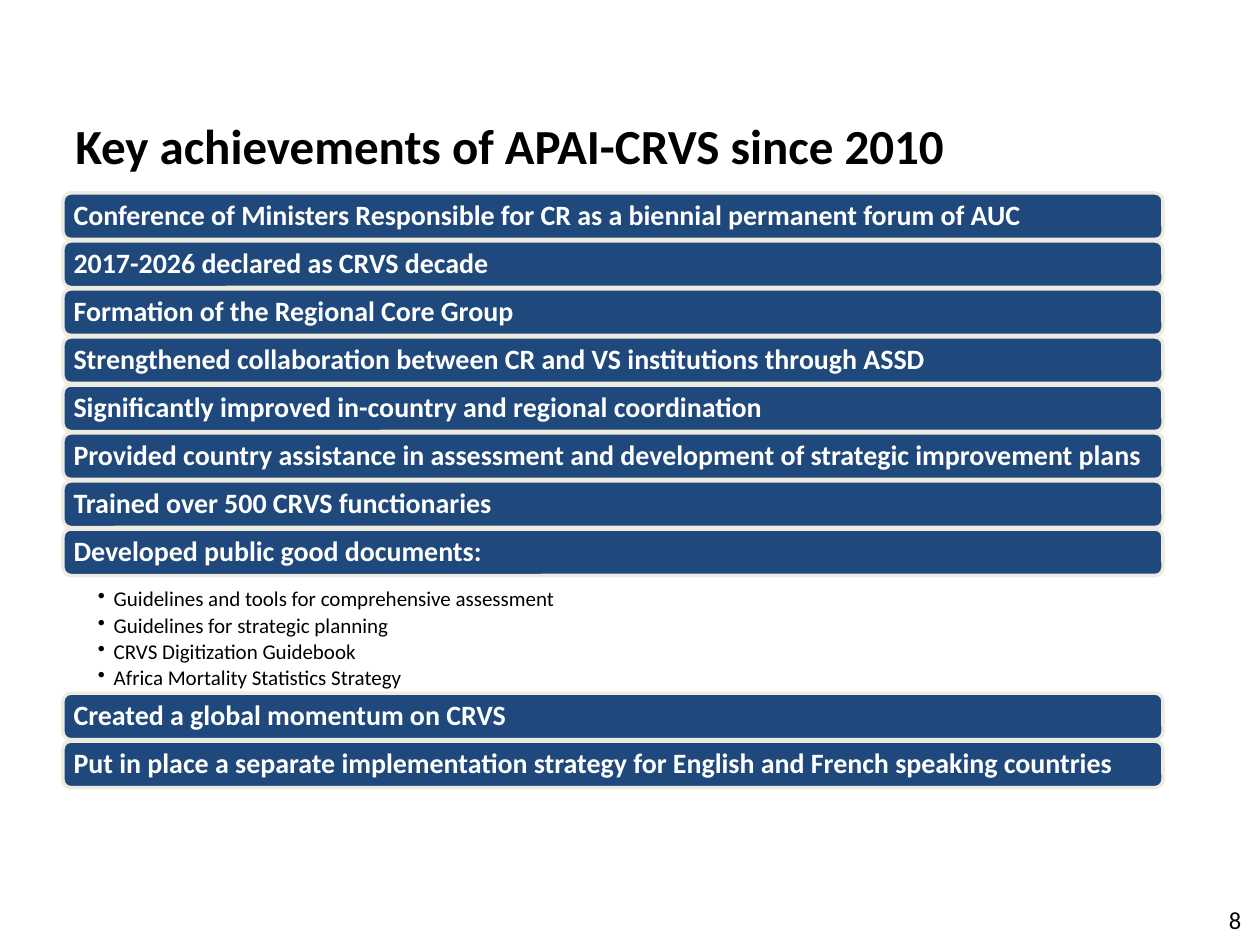
from dataclasses import dataclass

from lxml.etree import SubElement
from pptx import Presentation
from pptx.dml.color import RGBColor
from pptx.enum.shapes import MSO_SHAPE as Preset
from pptx.enum.text import MSO_ANCHOR as Anchor, PP_ALIGN as Align
from pptx.oxml.ns import qn
from pptx.util import Pt


@dataclass(frozen=True)
class Theme:
    font: str = "Calibri"
    ink: RGBColor = RGBColor(0x00, 0x00, 0x00)
    bar: RGBColor = RGBColor(0x1F, 0x49, 0x7D)
    edge: RGBColor = RGBColor(0xEE, 0xEC, 0xE1)
    bar_text: RGBColor = RGBColor(0xFF, 0xFF, 0xFF)
    title_size: int = 28
    bar_size: int = 16
    bullet_size: int = 12
    number_size: int = 14


theme = Theme()


def set_frame(shape, anchor, left, top, right, bottom):
    frame = shape.text_frame
    frame.word_wrap = True
    frame.vertical_anchor = anchor
    frame.margin_left, frame.margin_top = Pt(left), Pt(top)
    frame.margin_right, frame.margin_bottom = Pt(right), Pt(bottom)
    return frame


def add_run(paragraph, text, size, color, bold=False):
    run = paragraph.add_run()
    run.text = text
    run.font.name = theme.font
    run.font.size = Pt(size)
    run.font.bold = bold
    run.font.color.rgb = color


deck = Presentation()
deck.slide_width, deck.slide_height = Pt(720), Pt(540)
slide = deck.slides.add_slide(deck.slide_layouts[6])
shapes = slide.shapes

left, width = 36, 628.6
bar_height, bar_pitch = 26.6, 27.43

# Title
title = shapes.add_textbox(Pt(left), Pt(62.6), Pt(width), Pt(41))
title_frame = set_frame(title, Anchor.MIDDLE, 7.2, 3.6, 7.2, 3.6)
add_run(title_frame.paragraphs[0], "Key achievements of APAI-CRVS since 2010",
        theme.title_size, theme.ink, bold=True)

# Achievement bars, in two stacks around the document list
stacks = [
    (110.3, [
        "Conference of Ministers Responsible for CR as a biennial permanent forum of AUC",
        "2017-2026 declared as CRVS decade",
        "Formation of the Regional Core Group",
        "Strengthened collaboration between CR and VS institutions through ASSD",
        "Significantly improved in-country and regional coordination",
        "Provided country assistance in assessment and development of strategic improvement plans",
        "Trained over 500 CRVS functionaries",
        "Developed public good documents:",
    ]),
    (396.1, [
        "Created a global momentum on CRVS",
        "Put in place a separate implementation strategy for English and French speaking countries",
    ]),
]
for stack_top, achievements in stacks:
    for row, achievement in enumerate(achievements):
        bar = shapes.add_shape(Preset.ROUNDED_RECTANGLE, Pt(left),
                               Pt(stack_top + row * bar_pitch),
                               Pt(width), Pt(bar_height))
        bar.shadow.inherit = False
        bar.fill.solid()
        bar.fill.fore_color.rgb = theme.bar
        bar.line.color.rgb = theme.edge
        bar.line.width = Pt(2)
        paragraph = set_frame(bar, Anchor.MIDDLE, 4.8, 4.8, 4.8, 4.8).paragraphs[0]
        paragraph.alignment = Align.LEFT
        paragraph.line_spacing = 0.9
        add_run(paragraph, achievement, theme.bar_size, theme.bar_text, bold=True)

# Public good documents
documents = [
    "Guidelines and tools for comprehensive assessment",
    "Guidelines for strategic planning",
    "CRVS Digitization Guidebook",
    "Africa Mortality Statistics Strategy",
]
document_list = shapes.add_textbox(Pt(left), Pt(329.2), Pt(width), Pt(66.9))
document_frame = set_frame(document_list, Anchor.TOP, 20, 7.2, 6.5, 7.2)
for index, document in enumerate(documents):
    paragraph = document_frame.add_paragraph() if index else document_frame.paragraphs[0]
    paragraph.line_spacing = 0.9
    paragraph.space_after = Pt(2.1)
    properties = paragraph._p.get_or_add_pPr()
    properties.set("marL", str(Pt(9)))
    properties.set("indent", str(Pt(-9)))
    SubElement(properties, qn("a:buChar")).set("char", "•")
    add_run(paragraph, document, theme.bullet_size, theme.ink)

# Slide number
number = shapes.add_textbox(Pt(548.6), Pt(513.4), Pt(167.8), Pt(28.8))
number_line = set_frame(number, Anchor.TOP, 7.2, 3.6, 7.2, 3.6).paragraphs[0]
number_line.alignment = Align.RIGHT
add_run(number_line, "8", theme.number_size, theme.ink)

deck.save("out.pptx")
